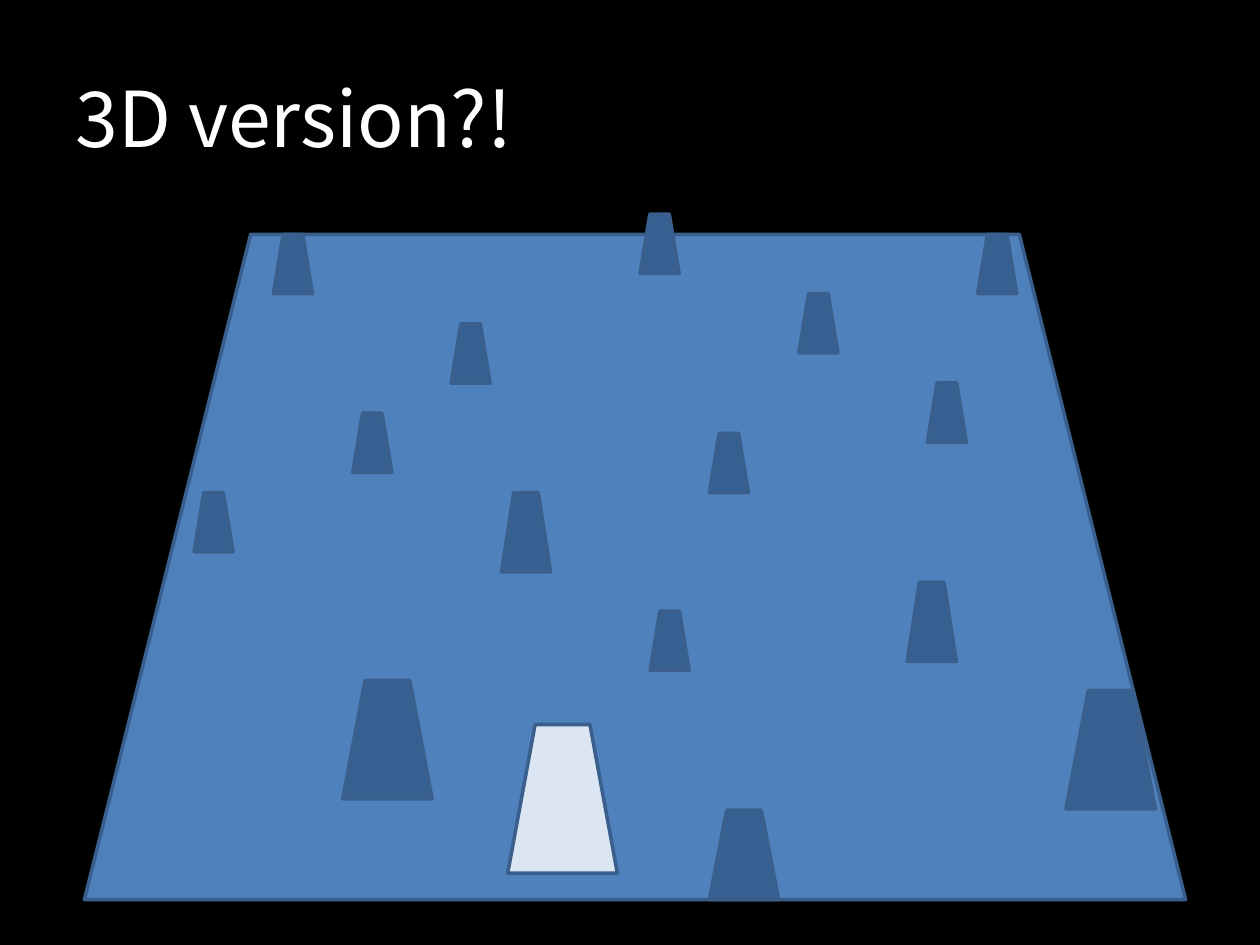
from pptx import Presentation
from pptx.dml.color import RGBColor
from pptx.enum import shapes, text
from pptx.util import Inches, Pt

FONT = "Noto Sans CJK KR"
EDGE = "3A5F8C"
FLOOR = "4F81BD"
OBSTACLE = "376092"
PLAYER = "DCE6F2"

# Obstacle size -> left and top of each, back to front
OBSTACLES = {
    (0.31, 0.47): [
        (2.17, 1.86), (5.08, 1.7), (7.76, 1.86), (6.34, 2.33),
        (3.58, 2.57), (7.36, 3.04), (2.8, 3.28), (5.63, 3.44),
        (1.54, 3.91), (5.16, 4.85),
    ],
    (0.39, 0.63): [(3.98, 3.91), (7.2, 4.62)],
    (0.71, 0.94): [(2.72, 5.4), (8.46, 5.48)],
    (0.55, 0.71): [(5.63, 6.43)],
}


def color(value):
    return RGBColor.from_string(value)


def add_label(slide, wording, left, top, width, height, *, size, fill):
    box = slide.shapes.add_textbox(
        Inches(left), Inches(top), Inches(width), Inches(height))
    frame = box.text_frame
    frame.word_wrap = True
    frame.vertical_anchor = text.MSO_ANCHOR.MIDDLE
    paragraph = frame.paragraphs[0]
    paragraph.alignment = text.PP_ALIGN.LEFT
    run = paragraph.add_run()
    run.text = wording
    run.font.name = FONT
    run.font.size = Pt(size)
    run.font.color.rgb = color(fill)


def add_trapezoid(slide, left, top, width, height, fill):
    block = slide.shapes.add_shape(
        shapes.MSO_SHAPE.TRAPEZOID,
        Inches(left), Inches(top), Inches(width), Inches(height))
    block.shadow.inherit = False
    block.fill.solid()
    block.fill.fore_color.rgb = color(fill)
    block.line.color.rgb = color(EDGE)
    block.line.width = Pt(2)


def main():
    deck = Presentation()
    deck.slide_width, deck.slide_height = Inches(10), Inches(7.5)
    slide = deck.slides.add_slide(deck.slide_layouts[6])
    slide.background.fill.solid()
    slide.background.fill.fore_color.rgb = color("000000")

    # Title
    add_label(slide, "3D version?!", 0.5, 0.3, 9, 1.25, size=44, fill="FFFFFF")

    # Floor in perspective
    add_trapezoid(slide, 0.67, 1.86, 8.74, 5.28, FLOOR)

    # Obstacles, larger towards the front
    for (width, height), places in OBSTACLES.items():
        for left, top in places:
            add_trapezoid(slide, left, top, width, height, OBSTACLE)

    # Player
    add_trapezoid(slide, 4.03, 5.75, 0.87, 1.18, PLAYER)

    deck.save("out.pptx")


if __name__ == "__main__":
    main()
